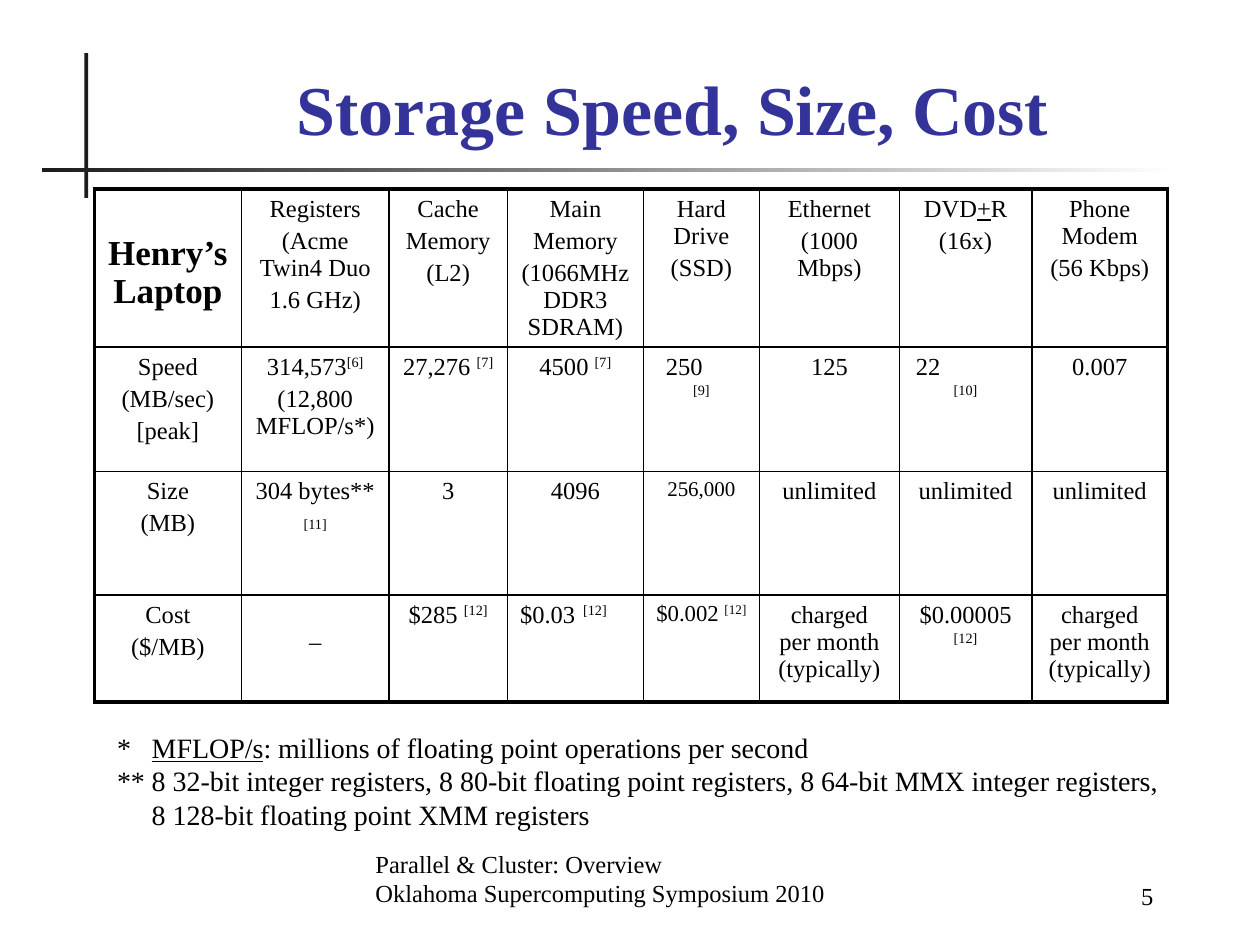
from dataclasses import dataclass
from typing import Optional

from lxml import etree
from pptx import Presentation
from pptx import util as u
from pptx.dml import color
from pptx.enum import shapes, text
from pptx.oxml import ns

BLACK = color.RGBColor(0, 0, 0)
CHARCOAL = color.RGBColor(0x1C, 0x1C, 0x1C)
WHITE = color.RGBColor(255, 255, 255)
INDIGO = color.RGBColor(0x33, 0x33, 0x99)
FONT = "Times New Roman"
CENTER, LEFT, RIGHT = text.PP_ALIGN.CENTER, text.PP_ALIGN.LEFT, text.PP_ALIGN.RIGHT
SUPER, UNDERLINE = "super", "underline"


@dataclass
class Line:
    """One paragraph: plain strings and (string, style) pairs, with its format."""
    wording: list
    size: float = 14
    bold: bool = False
    align: int = CENTER
    indent: float = 0
    hanging: float = 0
    tab: Optional[float] = None
    before: float = 0.2
    spacing: Optional[float] = None
    tint: color.RGBColor = BLACK


def ref(number):
    """Return a raised reference mark."""
    return (f"[{number}]", SUPER)


def write(frame, lines):
    """Fill a text frame with lines, given as Line objects or plain strings."""
    for index, line in enumerate(lines):
        line = line if isinstance(line, Line) else Line([line])
        para = frame.paragraphs[0] if index == 0 else frame.add_paragraph()
        para.alignment = line.align
        if line.spacing:
            para.line_spacing = line.spacing
        if index and line.before:
            para.space_before = u.Pt(line.before * line.size)
        props = para._p.get_or_add_pPr()
        props.set("marL", str(u.Cm(line.indent)))
        props.set("indent", str(u.Cm(-line.hanging)))
        if line.tab:
            tabs = etree.SubElement(props, ns.qn("a:tabLst"))
            etree.SubElement(tabs, ns.qn("a:tab"), pos=str(u.Cm(line.tab)), algn="l")
        font = para.font
        font.name, font.size, font.bold = FONT, u.Pt(line.size), line.bold
        font.color.rgb = line.tint
        for piece in line.wording:
            words, style = piece if isinstance(piece, tuple) else (piece, None)
            span = para.add_run()
            span.text = words
            if style == UNDERLINE:
                span.font.underline = True
            elif style == SUPER:
                span._r.get_or_add_rPr().set("baseline", "30000")


def add_rules(page, left, top):
    """Draw the crossing vertical and fading horizontal bars."""
    bars = [(left + 0.86, top, 0.08, 2.92), (left, top + 2.31, 22.86, 0.08)]
    for box in bars:
        bar = page.shapes.add_shape(shapes.MSO_SHAPE.RECTANGLE, *map(u.Cm, box))
        bar.shadow.inherit = False
        bar.line.fill.background()
        bar.fill.solid()
        bar.fill.fore_color.rgb = CHARCOAL
    bar.fill.gradient()
    bar.fill.gradient_angle = 0
    for stop, tint, position in zip(bar.fill.gradient_stops, (CHARCOAL, WHITE), (0, 1)):
        stop.color.rgb = tint
        stop.position = position


def add_title(page, left, top, width, height):
    """Place the slide title."""
    title = page.shapes.title
    title.left, title.top, title.width, title.height = map(u.Cm, (left, top, width, height))
    title.text_frame.vertical_anchor = text.MSO_ANCHOR.BOTTOM
    write(title.text_frame, [Line(["Storage Speed, Size, Cost"], 40, True, tint=INDIGO)])


def add_text(page, left, top, width, height, lines, anchor=text.MSO_ANCHOR.TOP):
    """Place a wrapping text box."""
    box = page.shapes.add_textbox(*map(u.Cm, (left, top, width, height)))
    box.text_frame.word_wrap = True
    box.text_frame.vertical_anchor = anchor
    write(box.text_frame, lines)


def set_borders(cell, outer_sides):
    """Draw thin cell borders, heavy on the outer sides."""
    props = cell._tc.get_or_add_tcPr()
    for side in "LRTB":
        weight = u.Pt(2.25 if side in outer_sides else 1)
        edge = etree.SubElement(props, ns.qn(f"a:ln{side}"), w=str(weight))
        fill = etree.SubElement(edge, ns.qn("a:solidFill"))
        etree.SubElement(fill, ns.qn("a:srgbClr"), val=str(BLACK))


HEADINGS = [
    [Line(["Henry’s"], 20, True, spacing=0.8), Line(["Laptop"], 20, True, spacing=0.8)],
    ["Registers", "(Acme Twin4 Duo", "1.6 GHz)"],
    ["Cache", "Memory", "(L2)"],
    ["Main", "Memory", "(1066MHz DDR3 SDRAM)"],
    ["Hard Drive", "(SSD)"],
    ["Ethernet", "(1000 Mbps)"],
    [Line(["DVD", ("+", UNDERLINE), "R"]), "(16x)"],
    ["Phone Modem", "(56 Kbps)"],
]
SPEEDS = [
    ["Speed", "(MB/sec)", "[peak]"],
    [Line(["314,573", ref(6)]), "(12,800 MFLOP/s*)"],
    [Line(["27,276 ", ref(7)])],
    [Line(["4500 ", ref(7)])],
    [Line(["250"], align=LEFT, indent=0.2), Line([ref(9)], before=0)],
    ["125"],
    [Line(["22"], align=LEFT, indent=0.08), Line([ref(10)], before=0)],
    ["0.007"],
]
SIZES = [
    ["Size", "(MB)"],
    ["304 bytes**", Line([ref(11)], spacing=1.2)],
    ["3"],
    ["4096"],
    [Line(["256,000"], 12)],
    *[["unlimited"]] * 3,
]
COSTS = [
    ["Cost", "($/MB)"],
    [Line(["–"], spacing=0.8)],
    [Line(["$285 ", ref(12)])],
    [Line(["$0.03\t", ref(12)], align=LEFT, tab=1.73)],
    [Line(["$0.002 ", ref(12)], 13)],
    ["charged", Line(["per month"], spacing=0.8), Line(["(typically)"], spacing=0.8)],
    [Line(["$0.00005 ", ref(12)])],
    ["charged per month (typically)"],
]
LOWERED = {(0, 0): 1.04, (3, 1): 0.77}


def add_storage_table(page, left, top, widths, heights):
    """Place the table of storage kinds by speed, size and cost."""
    rows = [HEADINGS, SPEEDS, SIZES, COSTS]
    box = map(u.Cm, (left, top, sum(widths), sum(heights)))
    table = page.shapes.add_table(len(rows), len(widths), *box).table
    table.first_row = table.horz_banding = False
    for column, width in zip(table.columns, widths):
        column.width = u.Cm(width)
    for row, height in zip(table.rows, heights):
        row.height = u.Cm(height)
    for r, row in enumerate(rows):
        for c, lines in enumerate(row):
            cell = table.cell(r, c)
            outer = {"L": c == 0, "R": c == len(widths) - 1, "T": r == 0, "B": r == len(rows) - 1}
            set_borders(cell, [side for side, is_outer in outer.items() if is_outer])
            cell.fill.background()
            cell.margin_top = u.Cm(LOWERED.get((r, c), 0.13))
            write(cell.text_frame, lines)


def main():
    """Build and save the deck."""
    deck = Presentation()
    deck.slide_width, deck.slide_height = u.Cm(25.4), u.Cm(19.05)
    page = deck.slides.add_slide(deck.slide_layouts[5])
    add_rules(page, 0.84, 1.07)
    add_title(page, 2.74, 1.27, 21.64, 1.88)
    add_storage_table(page, 1.9, 3.81, [2.97, 2.97, 2.39, 2.74, 2.34, 2.82, 2.67, 2.74],
                      [3.15, 2.51, 2.49, 2.16])
    note = dict(size=16, align=LEFT, indent=0.7, before=0)
    add_text(page, 2.11, 14.6, 21.64, 2.29, [
        Line(["*\t", ("MFLOP/s", UNDERLINE), ": millions of floating point operations per second"],
             hanging=0.7, **note),
        Line(["**\t8 32-bit integer registers, 8 80-bit floating point registers, "
              "8 64-bit MMX integer registers,"], hanging=0.7, **note),
        Line(["8 128-bit floating point XMM registers"], **note),
    ])
    bottom = text.MSO_ANCHOR.BOTTOM
    add_text(page, 7.32, 17.15, 11.1, 1.27, [
        Line([words], align=LEFT, before=0)
        for words in ("Parallel & Cluster: Overview", "Oklahoma Supercomputing Symposium 2010")
    ], bottom)
    add_text(page, 19.89, 17.2, 3.61, 1.27, [Line(["5"], align=RIGHT)], bottom)
    deck.save("out.pptx")


if __name__ == "__main__":
    main()
